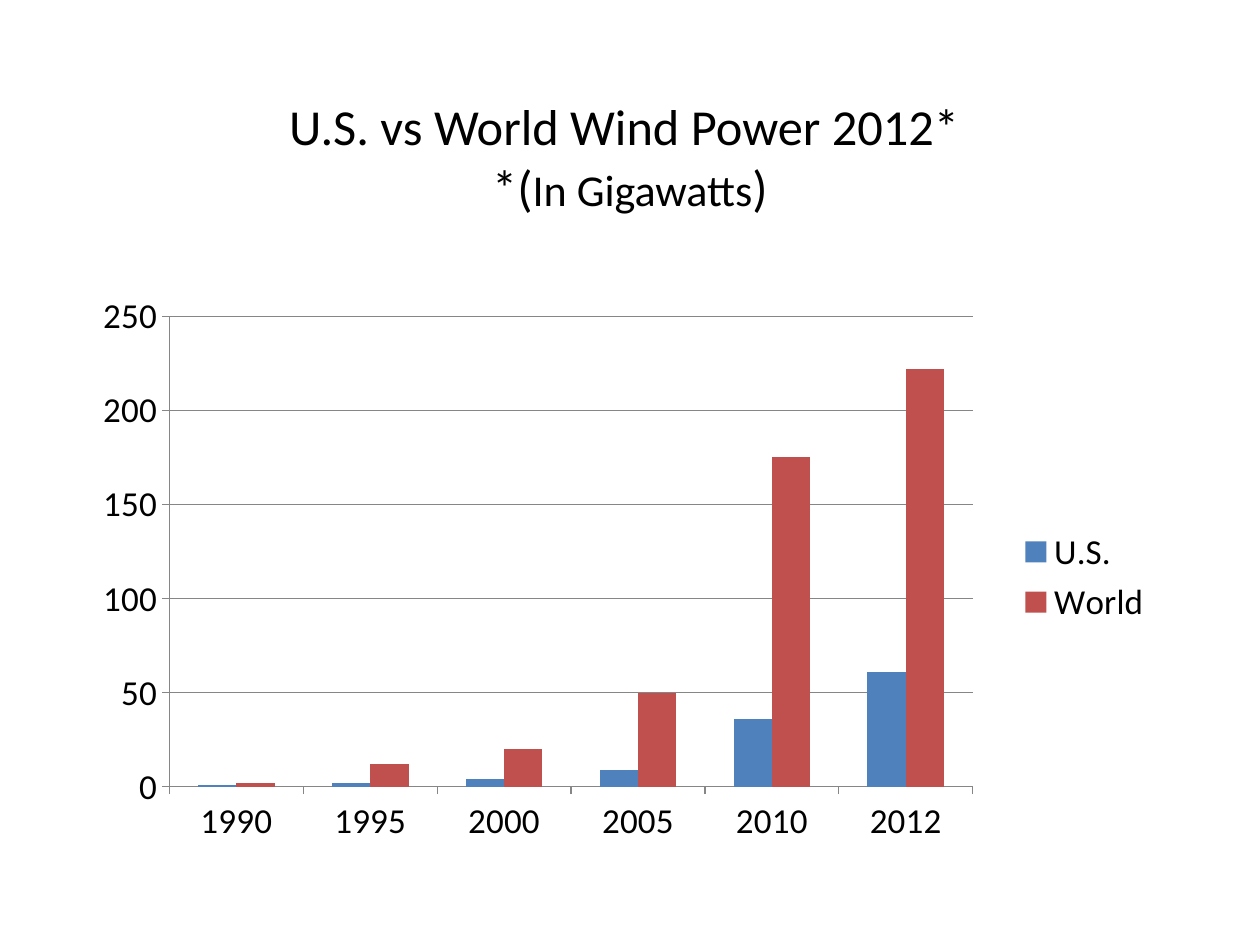
from dataclasses import dataclass
from typing import Any, NamedTuple

from lxml.etree import SubElement
from pptx import Presentation
from pptx.chart.data import CategoryChartData as ChartData
from pptx.dml.color import RGBColor as Rgb
from pptx.enum.chart import XL_CHART_TYPE as Kind
from pptx.enum.chart import XL_LEGEND_POSITION as Side
from pptx.enum.chart import XL_TICK_MARK as Tick
from pptx.enum.text import MSO_ANCHOR as Anchor
from pptx.enum.text import MSO_AUTO_SIZE as Fit
from pptx.enum.text import PP_ALIGN as Align
from pptx.oxml.ns import qn
from pptx.util import Pt

PX = 9144  # EMU in one px, at 100 px to the inch


@dataclass(frozen=True)
class Theme:
    face: str = "Calibri"
    ink: Rgb = Rgb(0, 0, 0)
    grid: Rgb = Rgb(0x86, 0x86, 0x86)
    head: float = 28.8
    unit: float = 25.2
    label: float = 20


class Box(NamedTuple):
    left: int
    top: int
    width: int
    height: int


class Series(NamedTuple):
    name: str
    vals: tuple[int, ...]
    color: str


THEME = Theme()
TITLE_BOX = Box(75, 75, 850, 125)
CHART_BOX = Box(75, 233, 850, 450)
PLOT = {"x": 0.07, "y": 0.04, "w": 0.75, "h": 0.83}
YEARS = ("1990", "1995", "2000", "2005", "2010", "2012")
POWER = (
    Series("U.S.", (1, 2, 4, 9, 36, 61), "4F81BD"),
    Series("World", (2, 12, 20, 50, 175, 222), "C0504D"),
)


def apply(item: Any, form: dict[str, Any]) -> None:
    for key, val in form.items():
        setattr(item, key, val)


def style(font: Any, size: float) -> None:
    apply(font, {"name": THEME.face, "size": Pt(size), "bold": False})
    font.color.rgb = THEME.ink


def rule(line: Any) -> None:
    line.width = Pt(0.75)
    line.color.rgb = THEME.grid


def add_title(slide: Any, box: Box) -> None:
    shape = slide.shapes.title
    apply(shape, {key: val * PX for key, val in box._asdict().items()})
    frame = shape.text_frame
    apply(frame, {
        "word_wrap": True, "auto_size": Fit.NONE,
        "vertical_anchor": Anchor.MIDDLE, "margin_bottom": 33 * PX,
    })
    para = frame.paragraphs[0]
    para.alignment = Align.CENTER
    for text, size in (
        ("U.S. vs World Wind Power 2012* \v", THEME.head),
        ("*(", THEME.head), ("In Gigawatts", THEME.unit), (")", THEME.head),
    ):
        run = para.add_run()
        run.text = text.rstrip("\v")
        style(run.font, size)
        if text.endswith("\v"):
            para.add_line_break()


def set_plot(chart: Any, spots: dict[str, float]) -> None:
    """Fix the inner plot area as shares of the chart's size."""
    area = chart._chartSpace.chart.plotArea
    for old in area.findall(qn("c:layout")):
        area.remove(old)
    layout = SubElement(area, qn("c:layout"))
    area.insert(0, layout)
    manual = SubElement(layout, qn("c:manualLayout"))
    parts = {"layoutTarget": "inner", "xMode": "edge", "yMode": "edge", **spots}
    for key, val in parts.items():
        SubElement(manual, qn(f"c:{key}")).set("val", str(val))


def add_bars(slide: Any, box: Box, rows: tuple[Series, ...]) -> None:
    data = ChartData()
    data.categories = YEARS
    for row in rows:
        data.add_series(row.name, row.vals)
    place = [val * PX for val in box]
    chart = slide.shapes.add_chart(Kind.COLUMN_CLUSTERED, *place, data).chart
    apply(chart, {"has_title": False, "has_legend": True})
    style(chart.font, THEME.label)
    apply(chart.legend, {"position": Side.RIGHT, "include_in_layout": False})

    plot = chart.plots[0]
    apply(plot, {"gap_width": 150, "overlap": 0, "vary_by_categories": False})
    for bars, row in zip(plot.series, rows):
        bars.invert_if_negative = False
        bars.format.fill.solid()
        bars.format.fill.fore_color.rgb = Rgb.from_string(row.color)

    for axis in (chart.category_axis, chart.value_axis):
        apply(axis, {
            "major_tick_mark": Tick.OUTSIDE, "minor_tick_mark": Tick.NONE,
            "has_major_gridlines": axis is chart.value_axis,
        })
        rule(axis.format.line)
    scale = chart.value_axis
    apply(scale, {"minimum_scale": 0, "maximum_scale": 250, "major_unit": 50})
    scale.has_major_gridlines = True
    chart.category_axis.has_major_gridlines = False
    rule(scale.major_gridlines.format.line)
    set_plot(chart, PLOT)


def main() -> None:
    deck = Presentation()
    apply(deck, {"slide_width": 1000 * PX, "slide_height": 750 * PX})
    slide = deck.slides.add_slide(deck.slide_layouts.get_by_name("Title Only"))
    add_title(slide, TITLE_BOX)
    add_bars(slide, CHART_BOX, POWER)
    deck.save("out.pptx")


if __name__ == "__main__":
    main()
